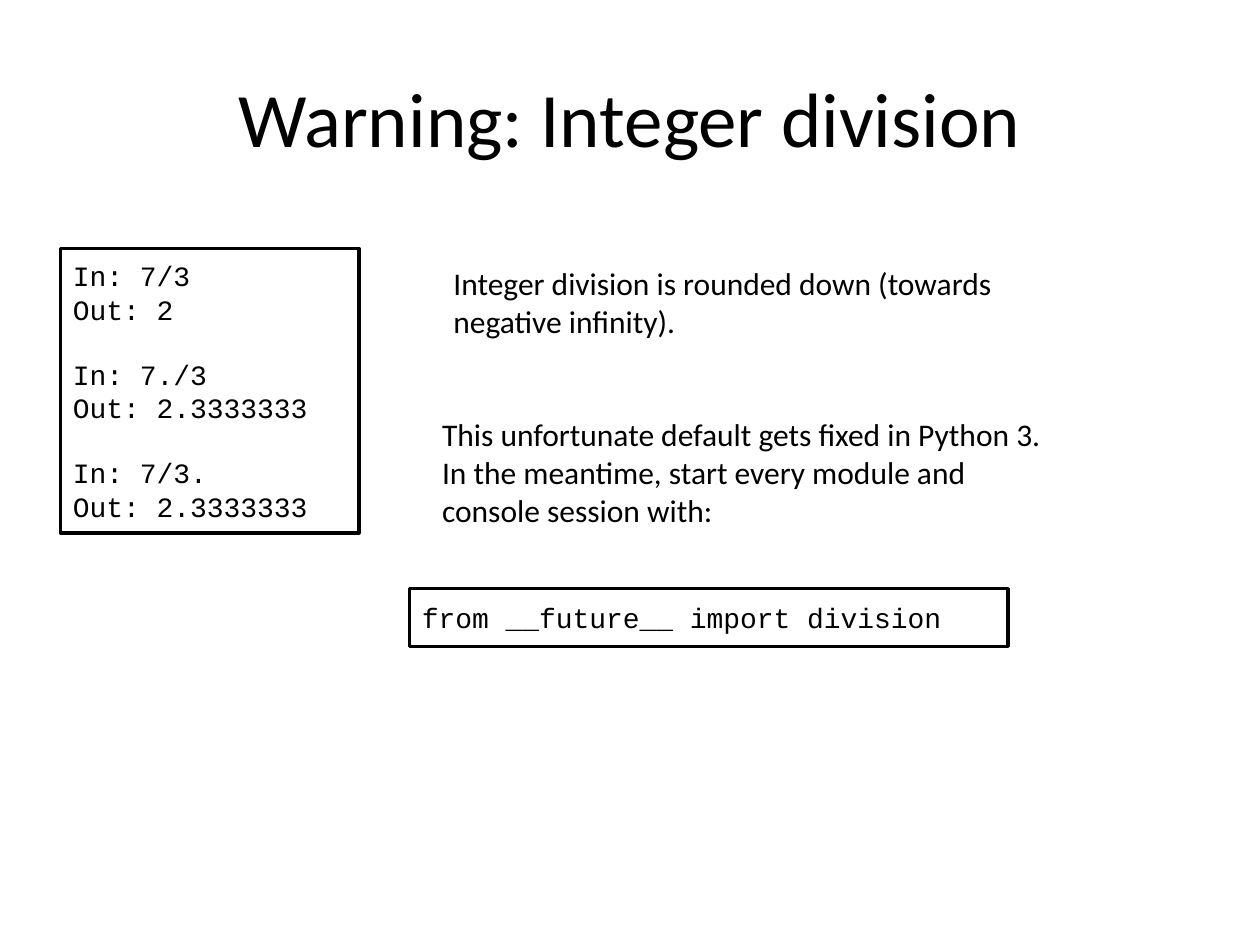
from pptx import Presentation
from pptx.dml.color import RGBColor
from pptx.enum.shapes import MSO_SHAPE
from pptx.enum.text import MSO_ANCHOR, MSO_AUTO_SIZE, PP_ALIGN
from pptx.util import Inches, Pt

BLACK = RGBColor(0, 0, 0)
WIDE, HIGH = 10, 7.5
PROSE, CODE = "Calibri", "Courier New"
TESTS = [("7/3", "2"), ("7./3", "2.3333333"), ("7/3.", "2.3333333")]


def area(x, y, w, h):
    """Turn shares of the slide's size into lengths."""
    return [Inches(n) for n in (x * WIDE, y * HIGH, w * WIDE, h * HIGH)]


def style(par, face, size, align=PP_ALIGN.LEFT):
    par.alignment = align
    par.font.name = face
    par.font.size = Pt(size)
    par.font.color.rgb = BLACK


def add_title(slide, text):
    title = slide.shapes.title
    title.left, title.top, title.width, title.height = area(0.05, 0.04, 0.9, 0.167)
    title.text_frame.text = text
    title.text_frame.vertical_anchor = MSO_ANCHOR.MIDDLE
    style(title.text_frame.paragraphs[0], PROSE, 44, PP_ALIGN.CENTER)


def add_code(slide, place, groups):
    """Draw a framed box of code, with a line's gap between groups."""
    box = slide.shapes.add_shape(MSO_SHAPE.RECTANGLE, *area(*place))
    box.shadow.inherit = False
    box.fill.background()
    box.line.color.rgb = BLACK
    box.line.width = Pt(2)
    frame = box.text_frame
    frame.word_wrap = True
    frame.vertical_anchor = MSO_ANCHOR.MIDDLE
    frame.text = "\n".join(line for group in groups for line in group)
    for par in frame.paragraphs:
        style(par, CODE, 16)
    start = 0
    for group in groups[:-1]:
        start += len(group)
        frame.paragraphs[start].space_before = Pt(18)


def add_note(slide, place, text):
    frame = slide.shapes.add_textbox(*area(*place)).text_frame
    frame.word_wrap = True
    frame.auto_size = MSO_AUTO_SIZE.SHAPE_TO_FIT_TEXT
    frame.text = text
    style(frame.paragraphs[0], PROSE, 18)


def main():
    deck = Presentation()
    deck.slide_width, deck.slide_height = Inches(WIDE), Inches(HIGH)
    slide = deck.slides.add_slide(deck.slide_layouts.get_by_name("Title Only"))
    add_title(slide, "Warning: Integer division")
    add_code(slide, (0.048, 0.263, 0.237, 0.301),
             [(f"In: {call}", f"Out: {value}") for call, value in TESTS])
    add_note(slide, (0.35, 0.273, 0.481, 0.095),
             "Integer division is rounded down (towards negative infinity).")
    add_note(slide, (0.341, 0.433, 0.508, 0.135),
             "This unfortunate default gets fixed in Python 3. In the meantime, "
             "start every module and console session with:")
    add_code(slide, (0.325, 0.623, 0.475, 0.061),
             [("from __future__ import division",)])
    deck.save("out.pptx")


if __name__ == "__main__":
    main()
